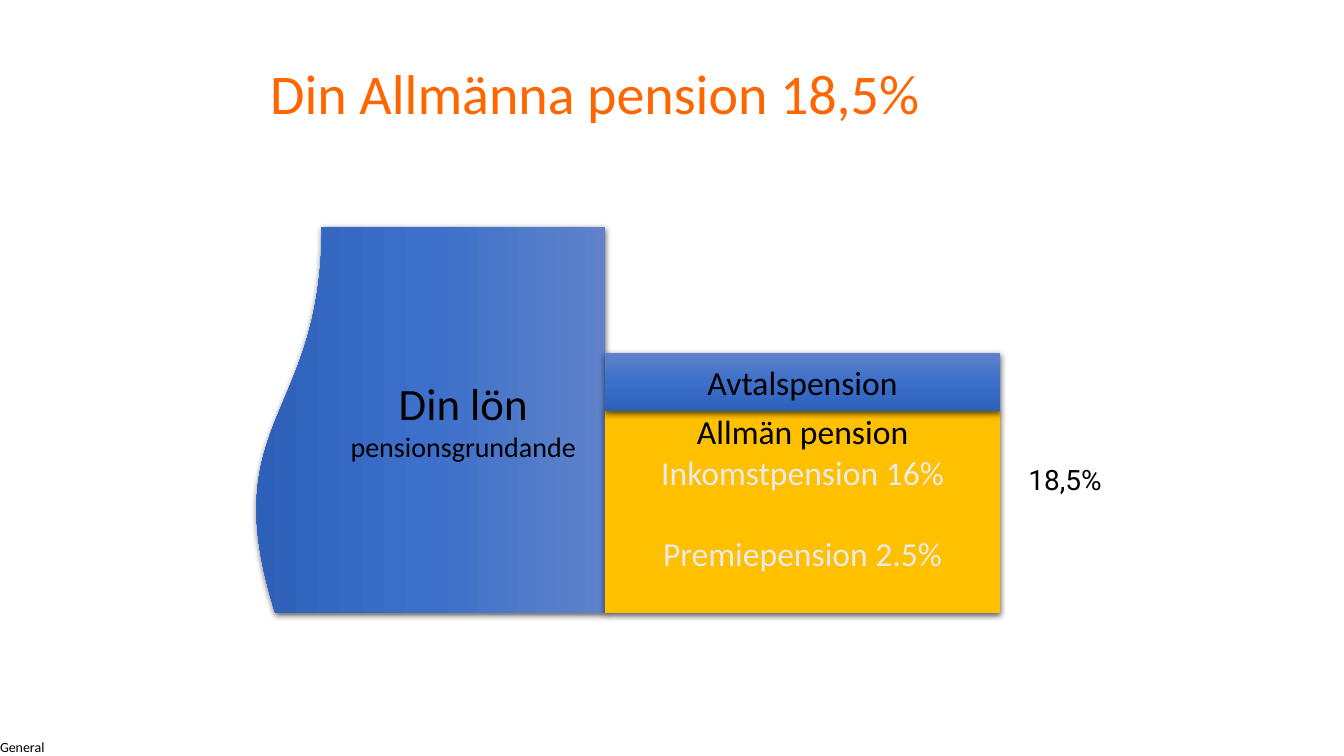
from copy import deepcopy
from lxml import etree
from pptx import Presentation
from pptx import util as u
from pptx.dml.color import RGBColor
from pptx.enum import shapes, text
from pptx.oxml.ns import qn

HUES = {"title": "FF6600", "ink": "000000", "pale": "EAEAEA", "gold": "FFC000",
        "light": "5F82CA", "mid": "3C70CA", "deep": "2E60B9"}
BLUE = [(0, "light"), (0.5, "mid"), (1, "deep")]
SANS, SIDE = "Calibri", "Roboto"

TITLE = [("Din Allmänna pension 18,5%", 40, "title", 0)]
WAGE = [("Din lön", 32, "ink", 0), ("pensionsgrundande", 20, "ink", 0)]
PLAN = [("Avtalspension", 24, "ink", 0)]
STATE = [("Allmän pension", 24, "ink", 0), ("Inkomstpension 16%", 24, "pale", 0),
         ("Premiepension 2.5%", 24, "pale", 29.3)]
SHARE = [("18,5%", 20, "ink", 0)]
LABEL = [("General", 10, "ink", 0)]

WIDE, HIGH = 13.33, 7.5
EDGE, TOP, BASE = 6, 2.25, 6.08
WAVE_W, WAVE_H = 3.5, BASE - TOP
BAR_W, PLAN_H, STATE_H = 3.92, 0.58, 2
STATE_Y = BASE - STATE_H
PLAN_Y = STATE_Y - PLAN_H

LEFT, MID = text.PP_ALIGN.LEFT, text.PP_ALIGN.CENTER
ANCHOR = text.MSO_ANCHOR


def hue(name):
    return RGBColor.from_string(HUES[name])


def write(shape, lines, align=LEFT, anchor=ANCHOR.MIDDLE, font=SANS, pad=(0.1, 0.05)):
    frame = shape.text_frame
    frame.word_wrap = True
    frame.auto_size = text.MSO_AUTO_SIZE.NONE
    frame.vertical_anchor = anchor
    frame.margin_left = frame.margin_right = u.Inches(pad[0])
    frame.margin_top = frame.margin_bottom = u.Inches(pad[1])
    for i, (words, size, color, gap) in enumerate(lines):
        para = frame.add_paragraph() if i else frame.paragraphs[0]
        para.alignment = align
        para.space_before = u.Pt(gap)
        run = para.add_run()
        run.text = words
        run.font.size = u.Pt(size)
        run.font.name = font
        run.font.color.rgb = hue(color)
    return frame


def blend(fill):
    fill.gradient()
    fill.gradient_angle = 270
    first = fill.gradient_stops[0]
    node = fill._fill._gradFill.find(qn("a:gsLst"))
    node.insert(1, deepcopy(node[0]))
    for stop, (spot, name) in zip(fill.gradient_stops, BLUE):
        stop.position = spot
        stop.color.rgb = hue(name)


def shade(shape):
    shape.shadow.inherit = False
    list_ = shape._element.spPr.find(qn("a:effectLst"))
    drop = etree.SubElement(list_, qn("a:outerShdw"), blurRad=str(u.Pt(4.5)),
                            dist=str(u.Pt(1.5)), dir="5400000", algn="ctr", rotWithShape="0")
    tone = etree.SubElement(drop, qn("a:srgbClr"), val=HUES["ink"])
    etree.SubElement(tone, qn("a:alpha"), val="63000")


def block(slide, kind, box, color=None):
    shape = slide.shapes.add_shape(kind, *map(u.Inches, box))
    if color:
        shape.fill.solid()
        shape.fill.fore_color.rgb = hue(color)
    else:
        blend(shape.fill)
    shape.line.fill.background()
    shade(shape)
    return shape


def note(slide, box):
    return slide.shapes.add_textbox(*map(u.Inches, box))


def main():
    deck = Presentation()
    deck.slide_width, deck.slide_height = u.Inches(WIDE), u.Inches(HIGH)
    slide = deck.slides.add_slide(deck.slide_layouts[5])

    title = slide.shapes.title
    title.left, title.top, title.width, title.height = map(u.Inches, (2.58, 0.33, 8.75, 1.25))
    write(title, TITLE).paragraphs[0].line_spacing = 0.9

    wave_x = EDGE - (WAVE_W + WAVE_H) / 2
    wave_y = (TOP + BASE - WAVE_W) / 2
    wave = block(slide, shapes.MSO_SHAPE.FLOWCHART_DOCUMENT, (wave_x, wave_y, WAVE_H, WAVE_W))
    wave.rotation = 90
    wave._element.spPr.xfrm.set("flipH", "1")
    write(note(slide, (3.19, TOP, EDGE - 3.19, WAVE_H)), WAGE, MID)

    rect = shapes.MSO_SHAPE.RECTANGLE
    state = block(slide, rect, (EDGE, STATE_Y, BAR_W, STATE_H), "gold")
    write(state, STATE, MID, ANCHOR.TOP, pad=(0.1, 0))
    plan = block(slide, rect, (EDGE, PLAN_Y, BAR_W, PLAN_H))
    write(plan, PLAN, MID)

    write(note(slide, (10.1, 3.52, 0.99, 1.45)), SHARE, anchor=ANCHOR.BOTTOM, font=SIDE)
    label = write(note(slide, (0, HIGH - 0.17, 0.48, 0.17)), LABEL, anchor=ANCHOR.TOP, pad=(0, 0))
    label.word_wrap = False
    deck.save("out.pptx")


if __name__ == "__main__":
    main()
